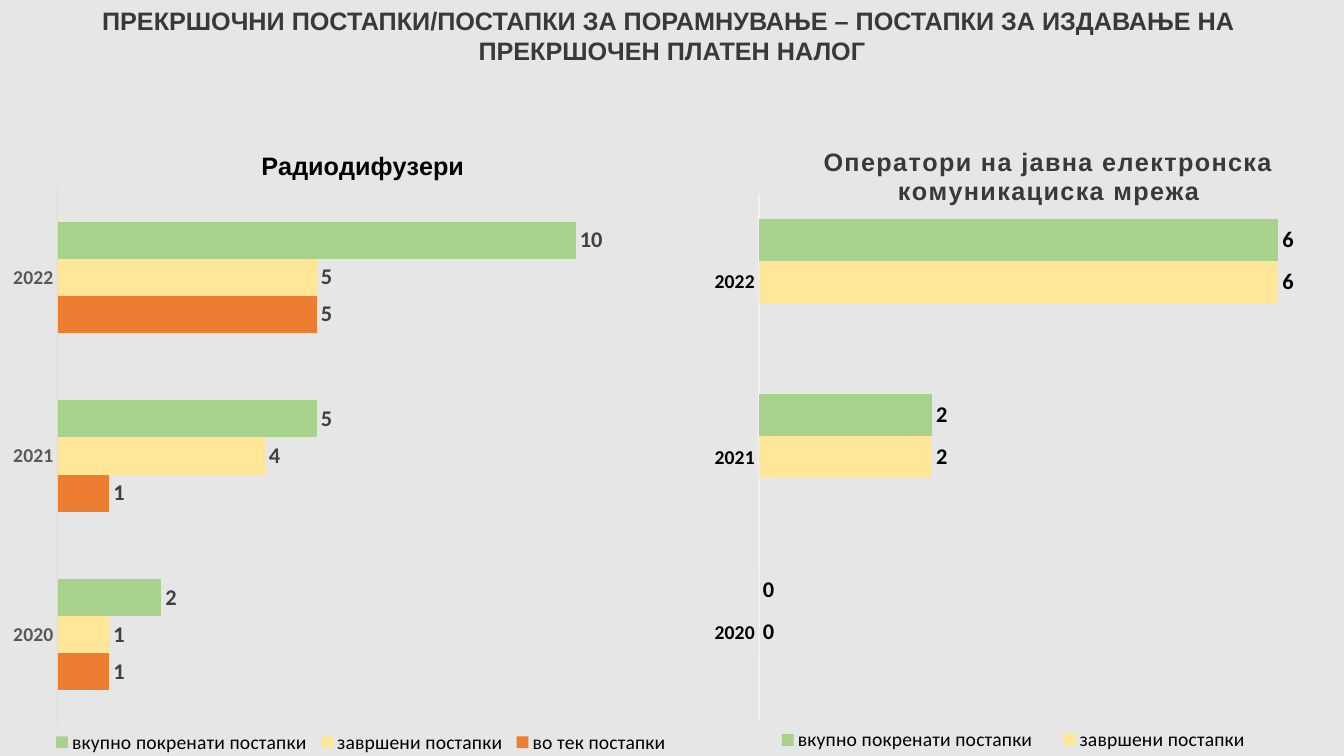
from lxml import etree
from pptx import Presentation
from pptx.chart.data import CategoryChartData
from pptx.dml.color import RGBColor
from pptx.enum.chart import (XL_CHART_TYPE, XL_LABEL_POSITION,
                             XL_LEGEND_POSITION, XL_TICK_MARK)
from pptx.enum.shapes import MSO_SHAPE
from pptx.enum.text import MSO_ANCHOR, PP_ALIGN
from pptx.oxml import parse_xml
from pptx.oxml.ns import nsdecls, qn
from pptx.util import Cm, Pt

BACKGROUND = RGBColor(0xEE, 0xF8, 0xFC)
PANEL = RGBColor(0xE7, 0xE6, 0xE6)
HEADING = RGBColor(0x3B, 0x38, 0x38)
BLACK = RGBColor(0, 0, 0)
AXIS_GREY = RGBColor(0x59, 0x59, 0x59)
LABEL_GREY = RGBColor(0x40, 0x40, 0x40)
LINE_GREY = RGBColor(0xD9, 0xD9, 0xD9)
LINE_LIGHT = RGBColor(0xF2, 0xF2, 0xF2)
ORANGE = RGBColor(0xED, 0x7D, 0x31)
YELLOW = RGBColor(0xFF, 0xE6, 0x99)
GREEN = RGBColor(0xA9, 0xD1, 0x8E)
BLUE_LIGHT = RGBColor(0x71, 0xA6, 0xDB)
BLUE_DARK = RGBColor(0x44, 0x8A, 0xCA)

YEARS = ["2020", "2021", "2022"]
SERIES_NAMES = ["во тек постапки", "завршени постапки",
                "вкупно покренати постапки"]


def set_font(font, size, color, bold=False, name="Calibri"):
    font.size = Pt(size)
    font.bold = bold
    font.name = name
    font.color.rgb = color


def add_heading(s, lines):
    sp = s.shapes.add_shape(MSO_SHAPE.RECTANGLE, 0, 0, Cm(33.87), Cm(2.82))
    sp.shadow.inherit = False
    sp.fill.solid()
    sp.fill.fore_color.rgb = PANEL
    sp.line.fill.background()
    tf = sp.text_frame
    tf.word_wrap = True
    tf.vertical_anchor = MSO_ANCHOR.TOP
    for i, line in enumerate(lines):
        p = tf.add_paragraph() if i else tf.paragraphs[0]
        p.alignment = PP_ALIGN.CENTER
        r = p.add_run()
        r.text = line
        set_font(r.font, 18, HEADING, True, "Arial")


def set_layout(parent, before, inner=False, **place):
    """Place a chart part by fractions of the chart's size."""
    for old in parent.findall(qn("c:layout")):
        parent.remove(old)
    layout = parse_xml(f"<c:layout {nsdecls('c')}><c:manualLayout/></c:layout>")
    manual = layout[0]
    if inner:
        etree.SubElement(manual, qn("c:layoutTarget")).set("val", "inner")
    for axis in "xy":
        etree.SubElement(manual, qn(f"c:{axis}Mode")).set("val", "edge")
    for key, value in place.items():
        etree.SubElement(manual, qn(f"c:{key}")).set("val", str(value))
    parent.find(qn(before)).addprevious(layout)


def fill_chart_area(chart):
    chart._chartSpace.find(qn("c:chart")).addnext(parse_xml(
        f"<c:spPr {nsdecls('c', 'a')}><a:solidFill><a:srgbClr val='{PANEL}'/>"
        "</a:solidFill><a:ln><a:noFill/></a:ln></c:spPr>"))


def add_title(chart, text, color, spacing, x, y):
    chart.has_title = True
    title = chart.chart_title
    title.include_in_layout = False
    r = title.text_frame.paragraphs[0].add_run()
    r.text = text
    set_font(r.font, 18, color, True, "Arial")
    r.font._element.set("spc", str(spacing))
    set_layout(title._element, "c:overlay", x=x, y=y)


def add_legend(chart, place):
    chart.has_legend = True
    legend = chart.legend
    legend.position = XL_LEGEND_POSITION.BOTTOM
    legend.include_in_layout = False
    set_font(legend.font, 14, BLACK)
    set_layout(legend._element, "c:overlay", **place)


def add_bar_chart(s, box, values, gap, plot_place, legend_place,
                  axis_color, label_color, line_color, line_width):
    data = CategoryChartData()
    data.categories = YEARS
    for name, numbers in zip(SERIES_NAMES, values):
        data.add_series(name, numbers)
    chart = s.shapes.add_chart(XL_CHART_TYPE.BAR_CLUSTERED,
                               *map(Cm, box), data).chart
    set_font(chart.font, 10, BLACK)
    fill_chart_area(chart)
    add_legend(chart, legend_place)

    # Axes
    chart.value_axis.visible = False
    chart.value_axis.has_major_gridlines = False
    axis = chart.category_axis
    axis.major_tick_mark = axis.minor_tick_mark = XL_TICK_MARK.NONE
    set_font(axis.tick_labels.font, 14, axis_color, True)
    axis.format.line.color.rgb = line_color
    axis.format.line.width = Pt(line_width)

    # Bars and their values
    plot = chart.plots[0]
    plot.gap_width = gap
    plot.overlap = 0
    plot.vary_by_categories = False
    for series, color in zip(plot.series, (ORANGE, YELLOW, GREEN)):
        series.format.fill.solid()
        series.format.fill.fore_color.rgb = color
        if any(series.values):
            labels = series.data_labels
            labels.show_value = True
            labels.position = XL_LABEL_POSITION.OUTSIDE_END
            set_font(labels.font, 16, label_color, True)
    set_layout(chart._chartSpace.chart.plotArea, "c:barChart", True,
               **plot_place)
    return chart


def mute_ongoing_series(chart):
    """Give the all-zero series its gradient and hide its legend entry."""
    fill = chart.plots[0].series[0].format.fill
    fill.gradient()
    fill.gradient_angle = 270
    for stop, color in zip(fill.gradient_stops, (BLUE_LIGHT, BLUE_DARK)):
        stop.color.rgb = color
    chart.legend._element.find(qn("c:legendPos")).addnext(parse_xml(
        f"<c:legendEntry {nsdecls('c')}><c:idx val='2'/>"
        "<c:delete val='1'/></c:legendEntry>"))


def main():
    prs = Presentation()
    prs.slide_width, prs.slide_height = Cm(33.87), Cm(19.05)
    s = prs.slides.add_slide(prs.slide_layouts[6])
    s.background.fill.solid()
    s.background.fill.fore_color.rgb = BACKGROUND

    # Heading
    add_heading(s, ["ПРЕКРШОЧНИ ПОСТАПКИ/ПОСТАПКИ ЗА ПОРАМНУВАЊЕ – "
                    "ПОСТАПКИ ЗА ИЗДАВАЊЕ НА ", "ПРЕКРШОЧЕН ПЛАТЕН НАЛОГ"])

    # Operators, on the right
    operators = add_bar_chart(
        s, (17.2, 2.74, 17.2, 16.36), [(0, 0, 0), (0, 2, 6), (0, 2, 6)], 115,
        dict(x=0.112, y=0.132, w=0.888, h=0.81),
        dict(x=0.11, y=0.945, w=0.75, h=0.055),
        BLACK, BLACK, LINE_LIGHT, 1)
    add_title(operators, "Оператори на јавна електронска комуникациска мрежа",
              HEADING, 100, 0.2, 0.05)
    mute_ongoing_series(operators)

    # Broadcasters, on the left
    broadcasters = add_bar_chart(
        s, (0, 2.82, 17.5, 16.81), [(1, 1, 5), (1, 4, 5), (2, 5, 10)], 182,
        dict(x=0.083, y=0.114, w=0.896, h=0.804),
        dict(x=0.07, y=0.92, w=0.9, h=0.05),
        AXIS_GREY, LABEL_GREY, LINE_GREY, 0.75)
    add_title(broadcasters, "Радиодифузери", BLACK, 0, 0.37, 0.05)

    prs.save("out.pptx")


if __name__ == "__main__":
    main()
